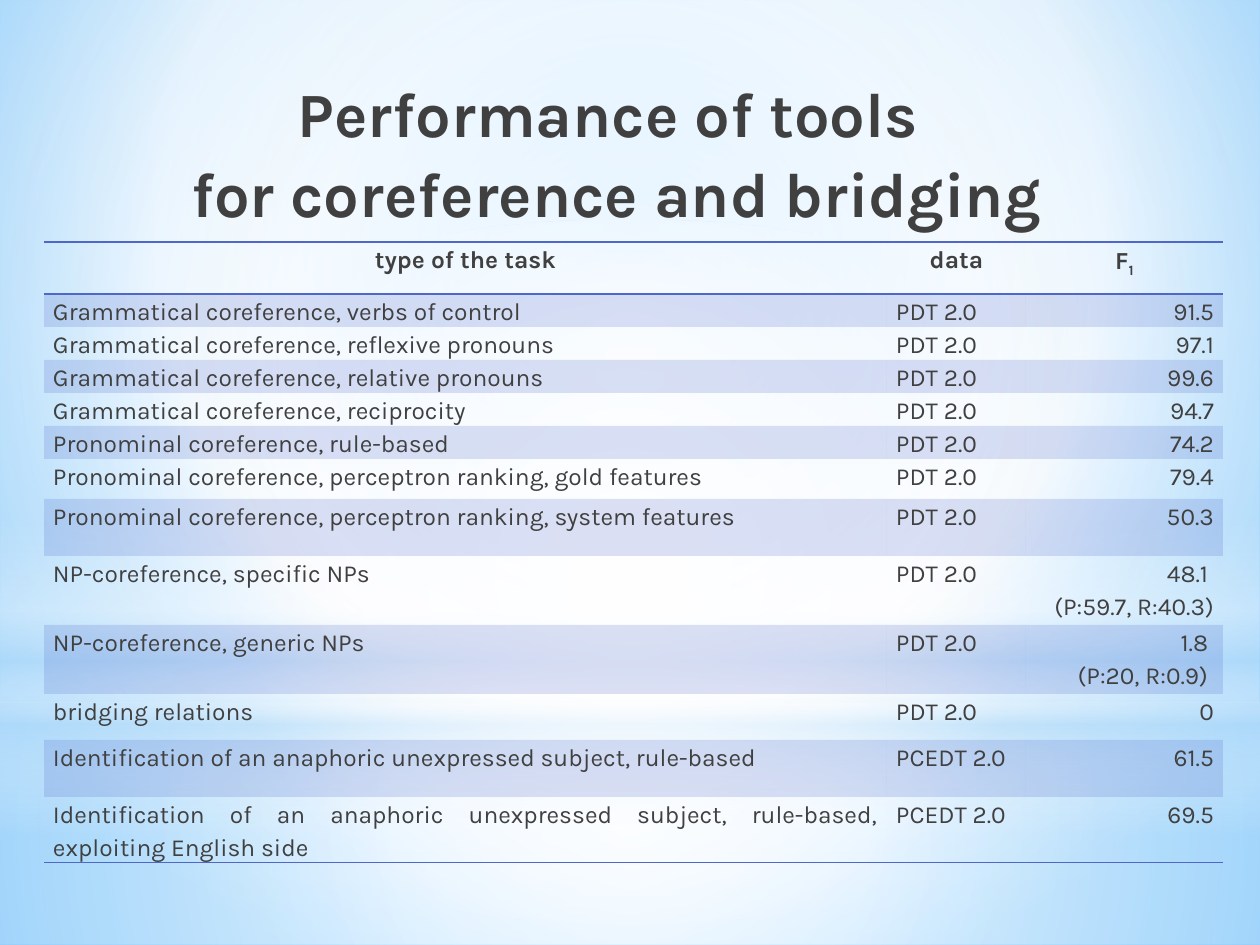
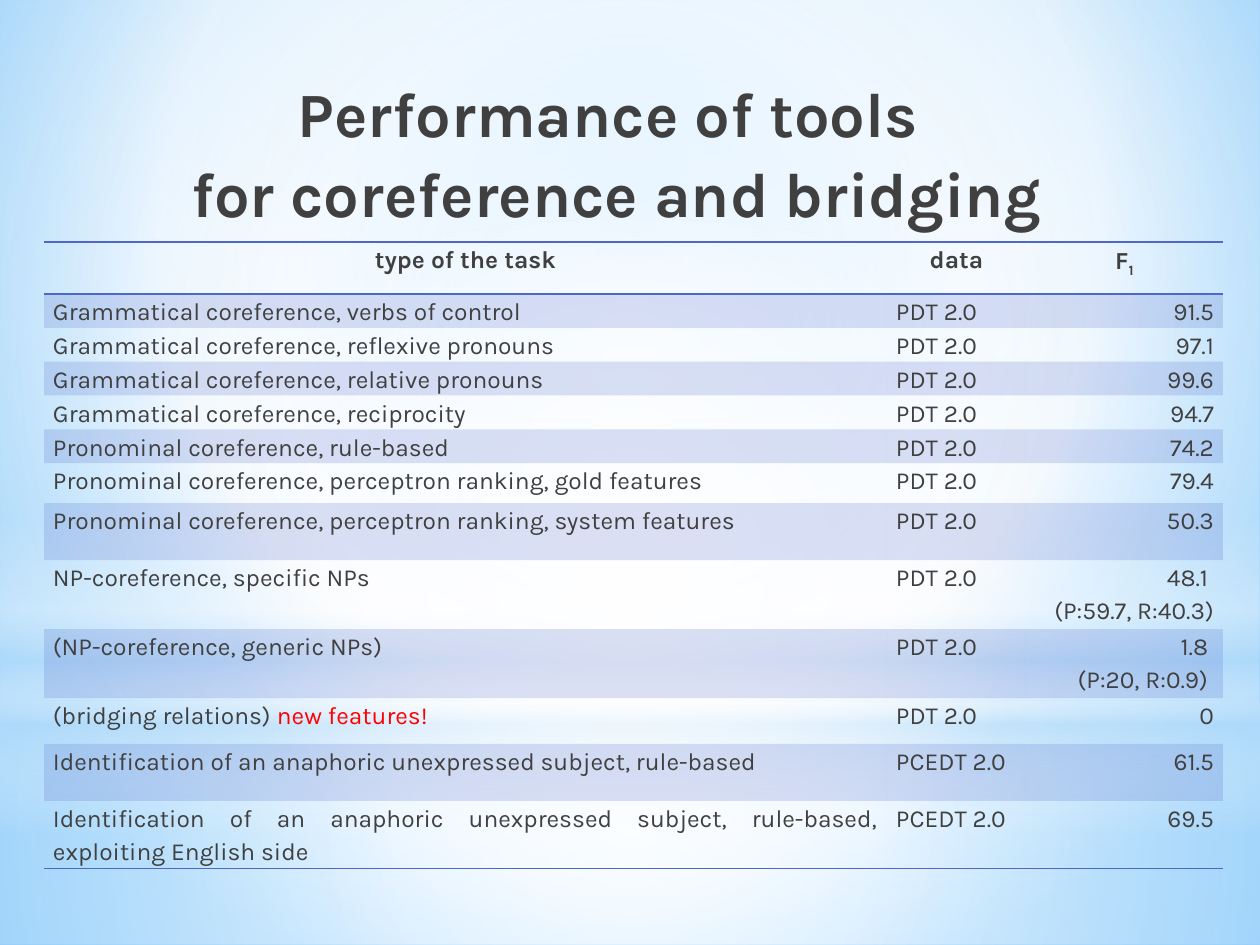
from dataclasses import dataclass

from lxml.etree import SubElement
from pptx import Presentation
from pptx.dml.color import RGBColor
from pptx.enum.shapes import MSO_SHAPE
from pptx.enum.text import MSO_ANCHOR, PP_ALIGN
from pptx.oxml import parse_xml
from pptx.oxml.ns import nsdecls, qn
from pptx.util import Emu, Pt


@dataclass(frozen=True)
class Theme:
    font: str = "Karla"
    text: str = "404040"
    accent: str = "4E67C8"
    highlight: str = "FF0000"
    white: str = "FFFFFF"
    haze: str = "B4DCFA"
    sky_centre: str = "9ED5FF"
    sky_edge: str = "5BB9FF"
    title_size: int = 36
    table_size: int = 14
    title_spacing: float = 1.05
    table_spacing: float = 1.15
    band_alpha: int = 20


THEME = Theme()
SLIDE_WIDTH, SLIDE_HEIGHT = 1260, 945
TITLE_BOX = (65, 65, 1102, 158)
TABLE_BOX = (44, 242, 1179, 620)
COLUMN_WIDTHS = (843, 139, 197)
ROW_HEIGHTS = (52, *[33] * 5, 40, 57, 69, 69, 46, 57, 65)
CELL_INSET = 9
CENTRE = (50, 50, 50, 50)
NO_TABLE_STYLE = "{2D5ABB26-0587-4C30-8999-92F81FD0307C}"

TITLE_LINES = ("Performance of tools ", "for coreference and bridging")
HEADINGS = ("type of the task", "data", "F")
SCORES = (
    ("Grammatical coreference, verbs of control", "PDT 2.0", "91.5"),
    ("Grammatical coreference, reflexive pronouns", "PDT 2.0", "97.1"),
    ("Grammatical coreference, relative pronouns", "PDT 2.0", "99.6"),
    ("Grammatical coreference, reciprocity", "PDT 2.0", "94.7"),
    ("Pronominal coreference, rule-based", "PDT 2.0", "74.2"),
    ("Pronominal coreference, perceptron ranking, gold features", "PDT 2.0", "79.4"),
    ("Pronominal coreference, perceptron ranking, system features", "PDT 2.0", "50.3"),
    ("NP-coreference, specific NPs", "PDT 2.0", "48.1 \n(P:59.7, R:40.3)"),
    ("NP-coreference, generic NPs", "PDT 2.0", "1.8 \n(P:20, R:0.9) "),
    ("bridging relations", "PDT 2.0", "0"),
    ("Identification of an anaphoric unexpressed subject, rule-based", "PCEDT 2.0", "61.5"),
    ("Identification of an anaphoric unexpressed subject, rule-based, "
     "exploiting English side", "PCEDT 2.0", "69.5"),
)
# Task name -> (new wording, highlighted remark)
REVISIONS = {
    "NP-coreference, generic NPs": ("(NP-coreference, generic NPs)", ""),
    "bridging relations": ("(bridging relations) ", "new features!"),
}


def px(length):
    return Emu(round(length * 914400 / 126))


def place(box):
    return [px(length) for length in box]


def set_gradient(fill, owner, stops, focus=None):
    """Fill with (position, colour, alpha) stops: circular around focus, else downwards."""
    fill.background()
    gradient = parse_xml(f'<a:gradFill {nsdecls("a")} rotWithShape="1"/>')
    stop_list = SubElement(gradient, qn("a:gsLst"))
    for position, colour, alpha in stops:
        stop = SubElement(stop_list, qn("a:gs"), pos=str(position * 1000))
        add_colour(stop, colour, alpha)
    if focus:
        circle = SubElement(gradient, qn("a:path"), {"path": "circle"})
        sides = {side: str(value * 1000) for side, value in zip("ltrb", focus)}
        SubElement(circle, qn("a:fillToRect"), sides)
    else:
        SubElement(gradient, qn("a:lin"), ang="5400000", scaled="0")
    empty_fill = next(owner.iter(qn("a:noFill")))
    empty_fill.getparent().replace(empty_fill, gradient)


def add_colour(parent, colour, alpha=100):
    element = SubElement(parent, qn("a:srgbClr"), val=colour)
    if alpha < 100:
        SubElement(element, qn("a:alpha"), val=str(alpha * 1000))


def add_run(paragraph, text, size, colour=THEME.text, bold=False):
    run = paragraph.add_run()
    run.text = text
    run.font.name = THEME.font
    run.font.size = Pt(size)
    run.font.bold = bold
    run.font.color.rgb = RGBColor.from_string(colour)
    return run


def build_master_sky(master, slide):
    """Give the master its sky; the glows are drawn on slide and moved to the master."""
    white, haze = THEME.white, THEME.haze
    sky = ((0, THEME.sky_centre, 100), (60, white, 100), (100, THEME.sky_edge, 100))
    set_gradient(master.background.fill, master.element, sky, (20, 10, 20, 60))
    horizon = 703
    glows = (
        (MSO_SHAPE.RECTANGLE, (0, horizon, SLIDE_WIDTH, SLIDE_HEIGHT - horizon), CENTRE,
         ((0, white, 91), (37, white, 76), (100, haze, 79))),
        (MSO_SHAPE.RECTANGLE, (0, 0, SLIDE_WIDTH, horizon), CENTRE,
         ((0, white, 89), (48, white, 62), (100, haze, 79))),
        (MSO_SHAPE.RECTANGLE, (0, 519, SLIDE_WIDTH, 315), None,
         ((0, white, 0), (29, white, 30), (45, haze, 40),
          (55, white, 26), (65, haze, 60), (100, white, 0))),
        (MSO_SHAPE.OVAL, (0, 220, SLIDE_WIDTH, horizon), CENTRE,
         ((0, white, 100), (56, white, 0))),
    )
    for index, (kind, box, focus, stops) in enumerate(glows):
        shape = slide.shapes.add_shape(kind, *place(box))
        shape.shadow.inherit = False
        set_gradient(shape.fill, shape.element, stops, focus)
        shape.line.fill.background()
        shape.element.nvSpPr.cNvPr.set("id", str(101 + index))
        master.shapes.element.insert(2 + index, shape.element)


def add_title(slide, box):
    frame = slide.shapes.add_textbox(*place(box)).text_frame
    frame.word_wrap = True
    frame.vertical_anchor = MSO_ANCHOR.TOP
    paragraph = frame.paragraphs[0]
    paragraph.alignment = PP_ALIGN.CENTER
    paragraph.line_spacing = THEME.title_spacing
    for index, line in enumerate(TITLE_LINES):
        if index:
            paragraph.add_line_break()
        add_run(paragraph, line, THEME.title_size, bold=True)


def format_cell(cell, tinted, borders):
    """Set the insets, the fill and the rules at the sides named in borders."""
    cell.margin_left = cell.margin_right = px(CELL_INSET)
    cell.margin_top = cell.margin_bottom = 0
    cell.vertical_anchor = MSO_ANCHOR.TOP
    properties = cell._tc.get_or_add_tcPr()
    if tinted:
        cell.fill.solid()
        cell.fill.fore_color.rgb = RGBColor.from_string(THEME.accent)
        colour = next(properties.iter(qn("a:srgbClr")))
        SubElement(colour, qn("a:alpha"), val=str(THEME.band_alpha * 1000))
    else:
        cell.fill.background()
    for index, side in enumerate(borders):
        line = parse_xml(f'<a:ln{side} {nsdecls("a")} w="{Pt(1)}"/>')
        add_colour(SubElement(line, qn("a:solidFill")), THEME.accent)
        properties.insert(index, line)


def write_cell(cell, text, alignment, bold=False):
    """Write one paragraph for each line and return the last one."""
    frame = cell.text_frame
    for index, line in enumerate(text.split("\n")):
        paragraph = frame.add_paragraph() if index else frame.paragraphs[0]
        paragraph.alignment = alignment
        paragraph.line_spacing = THEME.table_spacing
        add_run(paragraph, line, THEME.table_size, bold=bold)
    return paragraph


def add_score_table(slide, box, revisions):
    rows = (HEADINGS, *SCORES)
    graphic = slide.shapes.add_table(len(rows), len(HEADINGS), *place(box))
    next(graphic.element.iter(qn("a:tableStyleId"))).text = NO_TABLE_STYLE
    table = graphic.table
    table.first_row = table.horz_banding = False
    for column, width in zip(table.columns, COLUMN_WIDTHS):
        column.width = px(width)
    for row, height in zip(table.rows, ROW_HEIGHTS):
        row.height = px(height)

    body_alignments = (PP_ALIGN.JUSTIFY, PP_ALIGN.JUSTIFY, PP_ALIGN.RIGHT)
    for row_index, values in enumerate(rows):
        is_heading = row_index == 0
        borders = "TB" if is_heading else "B" if row_index == len(rows) - 1 else ""
        for column_index, value in enumerate(values):
            cell = table.cell(row_index, column_index)
            format_cell(cell, row_index % 2 == 1, borders)
            text, remark = revisions.get(value, (value, ""))
            alignment = PP_ALIGN.CENTER if is_heading else body_alignments[column_index]
            paragraph = write_cell(cell, text, alignment, is_heading)
            if remark:
                add_run(paragraph, remark, THEME.table_size, THEME.highlight)
            if value == "F":
                subscript = add_run(paragraph, "1", THEME.table_size, bold=True)
                subscript.font._element.set("baseline", "-25000")


def main():
    presentation = Presentation()
    presentation.slide_width = px(SLIDE_WIDTH)
    presentation.slide_height = px(SLIDE_HEIGHT)
    blank_layout = presentation.slide_layouts[6]
    for revisions in ({}, REVISIONS):
        slide = presentation.slides.add_slide(blank_layout)
        if not revisions:
            build_master_sky(presentation.slide_master, slide)
        add_score_table(slide, TABLE_BOX, revisions)
        add_title(slide, TITLE_BOX)
    presentation.save("out.pptx")


if __name__ == "__main__":
    main()
